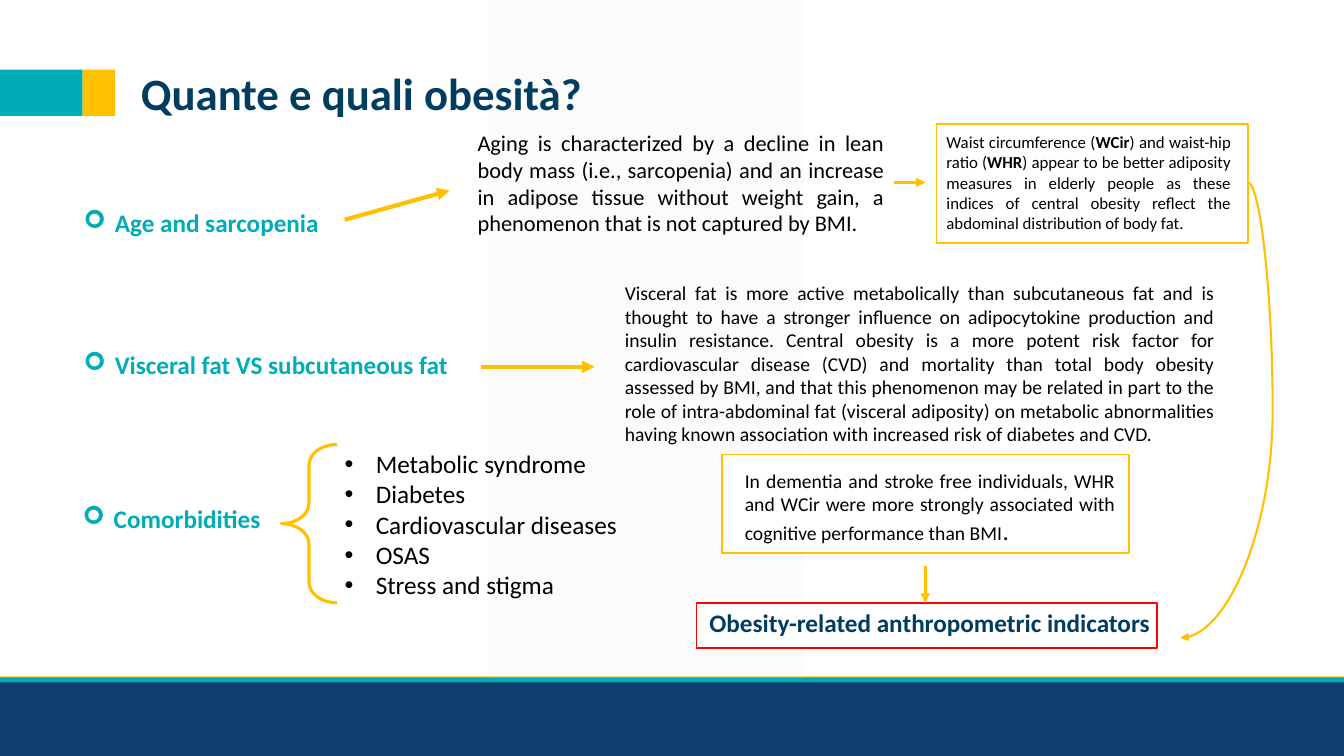
from lxml.etree import SubElement
from pptx import Presentation
from pptx.dml.color import RGBColor
from pptx.enum.shapes import MSO_CONNECTOR as Link, MSO_SHAPE as Preset
from pptx.enum.text import PP_ALIGN as Align
from pptx.oxml.ns import qn
from pptx.util import Inches, Pt

COLORS = {"yellow": "FFC000", "teal": "00ACB6", "navy": "013D61", "footer": "113F6F",
          "panel": "F2F2F2", "red": "FF0000", "white": "FFFFFF", "black": "000000"}
FONT = "Calibri"
WIDTH, HEIGHT = Inches(13.333), Inches(7.5)
COL, ROW = WIDTH / 100, HEIGHT / 100  # the slide is a grid of 100 columns and 100 rows
INDENT = Inches(0.31)


def rgb(name):
    return RGBColor.from_string(COLORS[name])


def place(origin, x, y):
    """Turn columns and rows, counted from a region's origin, into lengths."""
    return round((origin[0] + x) * COL), round((origin[1] + y) * ROW)


def add_block(slide, origin, cell, fill=None, line=None, weight=1.25, preset=Preset.RECTANGLE):
    x, y, w, h = cell
    block = slide.shapes.add_shape(preset, *place(origin, x, y), *place((0, 0), w, h))
    block.shadow.inherit = False
    if fill:
        block.fill.solid()
        block.fill.fore_color.rgb = rgb(fill)
    else:
        block.fill.background()
    if line:
        block.line.color.rgb = rgb(line)
        block.line.width = Pt(weight)
    else:
        block.line.fill.background()
    return block


def add_text(slide, origin, cell, lines, size, color="black", bold=None, align=None, bullet=None):
    """Each line is a list of (text, run font settings)."""
    x, y, w, h = cell
    frame = slide.shapes.add_textbox(*place(origin, x, y), *place((0, 0), w, h)).text_frame
    frame.word_wrap = True
    for number, line in enumerate(lines):
        paragraph = frame.add_paragraph() if number else frame.paragraphs[0]
        if bullet:
            mark, typeface = bullet
            props = paragraph._p.get_or_add_pPr()
            props.set("marL", str(INDENT))
            props.set("indent", str(-INDENT))
            SubElement(props, qn("a:buFont"), typeface=typeface)
            SubElement(props, qn("a:buChar"), char=mark)
        if align:
            paragraph.alignment = align
        font = paragraph.font
        font.name, font.size, font.bold = FONT, Pt(size), bold
        font.color.rgb = rgb(color)
        for words, settings in line:
            run = paragraph.add_run()
            run.text = words
            for setting, value in settings.items():
                setattr(run.font, setting, value)


def add_arrow(slide, origin, start, end, weight, kind=Link.STRAIGHT):
    arrow = slide.shapes.add_connector(kind, *place(origin, *start), *place(origin, *end))
    arrow.line.color.rgb = rgb("yellow")
    arrow.line.width = Pt(weight)
    SubElement(arrow.line._get_or_add_ln(), qn("a:tailEnd"), type="triangle")
    SubElement(arrow._element.spPr, qn("a:effectLst"))
    return arrow


def add_topic(slide, origin, cell, topic):
    add_text(slide, origin, cell, [[(topic, {})]], 18, "teal", True, bullet=("➢", "Wingdings"))


def add_backdrop(slide, origin):
    add_block(slide, origin, (0, 89.47, 100, 0.67), "yellow")
    add_block(slide, origin, (0, 90, 100, 10), "footer")
    panel = add_block(slide, origin, (36.4, 0, 23.4, 90), "panel")
    tint = panel._element.spPr.find(qn("a:solidFill"))[0]
    SubElement(tint, qn("a:alpha"), val="30000")
    add_block(slide, origin, (0, 89.6, 100, 0.67), "teal")


def add_heading(slide, origin):
    add_block(slide, origin, (0, 1.2, 6.15, 6.13), "teal")
    add_block(slide, origin, (6.15, 1.2, 2.4, 6.13), "yellow")
    add_text(slide, origin, (9.75, 0, 40.73, 8.53), [[("Quante e quali obesità?", {})]],
             32, "navy", True)


def add_aging(slide, origin):
    add_topic(slide, origin, (5.48, 10.4, 19.65, 5.33), "Age and sarcopenia")
    add_arrow(slide, origin, (25.65, 12.67), (33.45, 8.8), 3)
    aging = ("Aging is characterized by a decline in lean body mass (i.e., sarcopenia) and an "
             "increase in adipose tissue without weight gain, a phenomenon that is not captured "
             "by BMI.")
    add_text(slide, origin, (34.8, 0, 31.73, 15.73), [[(aging, {})]], 16, align=Align.JUSTIFY)
    add_arrow(slide, origin, (66.53, 7.73), (68.85, 7.73), 2.25)
    # Framed note on waist measures
    add_block(slide, origin, (69.68, 0, 23.18, 15.73), "white", "yellow")
    strong = {"bold": True}
    waist = [("Waist circumference (", {}), ("WCir", strong), (") and waist-hip ratio (", {}),
             ("WHR", strong),
             (") appear to be better adiposity measures in elderly people as these indices of "
              "central obesity reflect the abdominal distribution of body fat.", {})]
    add_text(slide, origin, (69.68, 0.4, 22.65, 14.8), [waist], 12, align=Align.JUSTIFY)


def add_visceral_fat(slide, origin):
    add_topic(slide, origin, (5.48, 9.07, 29.63, 5.33), "Visceral fat VS subcutaneous fat")
    add_arrow(slide, origin, (35.78, 12), (44.25, 12), 3)
    visceral = ("Visceral fat is more active metabolically than subcutaneous fat and is thought "
                "to have a stronger influence on adipocytokine production and insulin "
                "resistance. Central obesity is a more potent risk factor for cardiovascular "
                "disease (CVD) and mortality than total body obesity assessed by BMI, and that "
                "this phenomenon may be related in part to the role of intra-abdominal fat "
                "(visceral adiposity) on metabolic abnormalities having known association with "
                "increased risk of diabetes and CVD.")
    add_text(slide, origin, (45.75, 0, 45.38, 23.33), [[(visceral, {})]], 14,
             align=Align.JUSTIFY)


def add_comorbidities(slide, origin):
    add_topic(slide, origin, (5.4, 7.2, 17.03, 5.33), "Comorbidities")
    brace = add_block(slide, origin, (20.93, 0.13, 4.13, 20.93), line="yellow", weight=2.25,
                      preset=Preset.LEFT_BRACE)
    brace.adjustments[0] = 0.37
    diseases = ["Metabolic syndrome", "Diabetes", "Cardiovascular diseases", "OSAS",
                "Stress and stigma"]
    add_text(slide, origin, (24.9, 0, 27.45, 21.6), [[(disease, {})] for disease in diseases],
             18, bullet=("•", "Arial"))


def add_conclusion(slide, origin):
    add_block(slide, origin, (53.7, 0, 30.3, 13.07), "white", "yellow")
    dementia = [("In dementia and stroke free individuals, WHR and WCir were more strongly "
                 "associated with cognitive performance than BMI", {}), (".", {"size": Pt(18)})]
    add_text(slide, origin, (54.68, 1.2, 29.03, 11.73), [dementia], 14, align=Align.JUSTIFY)
    # Framed result
    add_block(slide, origin, (51.83, 19.6, 34.28, 6), "white", "red")
    add_text(slide, origin, (52.05, 19.6, 35.7, 6),
             [[("Obesity-related anthropometric indicators", {})]], 18, "navy", True)
    add_arrow(slide, origin, (68.85, 14.8), (68.85, 19.6), 2.25)


def add_return_curve(slide, origin):
    curve = add_arrow(slide, origin, (5.02, 0), (0, 60.27), 1.5, Link.CURVE)
    bends = curve._element.spPr.find(qn("a:prstGeom")).get_or_add_avLst()
    SubElement(bends, qn("a:gd"), name="adj1", fmla="val -36900")


def main():
    deck = Presentation()
    deck.slide_width, deck.slide_height = WIDTH, HEIGHT
    slide = deck.slides.add_slide(deck.slide_layouts[6])
    add_backdrop(slide, (0, 0))
    add_heading(slide, (0, 8))
    add_aging(slide, (0, 16.4))
    add_visceral_fat(slide, (0, 36.53))
    add_comorbidities(slide, (0, 58.67))
    add_conclusion(slide, (0, 60.13))
    add_return_curve(slide, (87.83, 24.13))
    deck.save("out.pptx")


if __name__ == "__main__":
    main()
